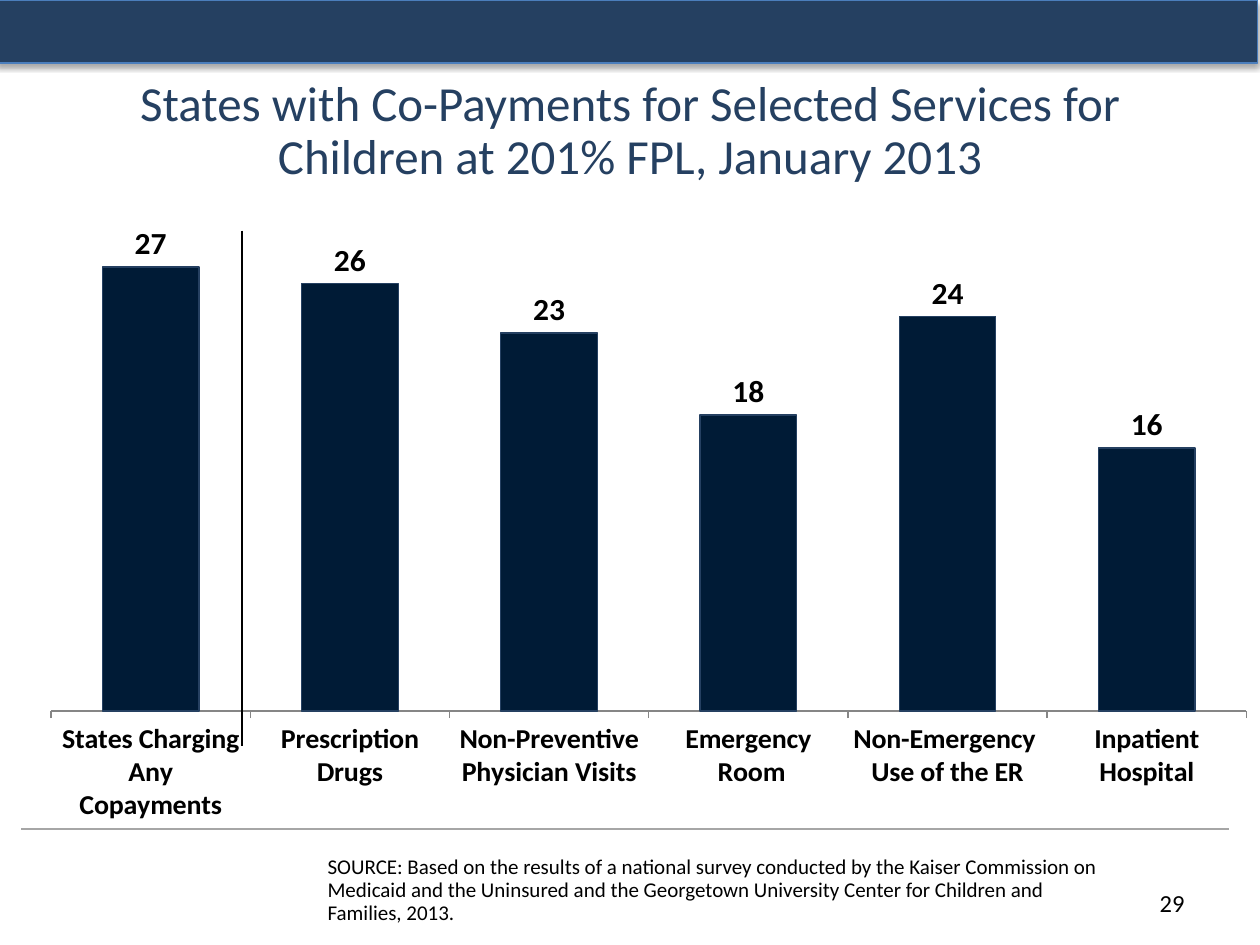
"""Build a slide charting states with co-payments for children's services."""
from dataclasses import dataclass

from lxml import etree
from pptx import Presentation
from pptx import util as u
from pptx.chart.data import CategoryChartData
from pptx.dml.color import RGBColor
from pptx.enum import chart as ch, shapes, text
from pptx.oxml import parse_xml
from pptx.oxml.ns import nsdecls, qn

COLORS = {"navy": "254061", "bar": "001B36", "edge": "4B7EBC",
          "text": "000000", "rule": "A6A6A6", "axis": "868686"}
COPAYS = {
    "States Charging Any Copayments": 27,
    "Prescription Drugs": 26,
    "Non-Preventive Physician Visits": 23,
    "Emergency\n Room": 18,
    "Non-Emergency \nUse of the ER": 24,
    "Inpatient Hospital": 16,
}
PLOT = {"x": 0.017, "y": 0.031, "w": 0.973, "h": 0.813}


@dataclass
class Rule:
    """A straight line given by its ends in inches."""
    x1: float
    y1: float
    x2: float
    y2: float
    color: str


@dataclass
class Label:
    """Text with its box and format."""
    words: str
    box: tuple
    size: int
    color: str
    para: dict
    frame: dict


RULES = [Rule(1.92, 1.83, 1.92, 5.92, "text"), Rule(0.17, 6.58, 9.75, 6.58, "rule")]
TITLE = Label("States with Co-Payments for Selected Services for Children at 201% FPL, "
              "January 2013", (0.5, 0.42, 9, 1.25), 28, "navy",
              {"alignment": text.PP_ALIGN.CENTER, "line_spacing": 0.9},
              {"vertical_anchor": text.MSO_ANCHOR.MIDDLE})
SOURCE = Label("SOURCE: Based on the results of a national survey conducted by the Kaiser "
               "Commission on Medicaid and the Uninsured and the Georgetown University "
               "Center for Children and Families, 2013.", (2.5, 6.75, 6.33, 0.75), 12, "text",
               {"alignment": text.PP_ALIGN.LEFT, "line_spacing": 0.9, "space_before": u.Pt(0)},
               {"vertical_anchor": text.MSO_ANCHOR.TOP})
NUMBER = Label("29", (7.17, 7, 2.33, 0.4), 14, "text",
               {"alignment": text.PP_ALIGN.RIGHT},
               {"vertical_anchor": text.MSO_ANCHOR.TOP})


def rgb(name: str) -> RGBColor:
    """Return a named colour."""
    return RGBColor.from_string(COLORS[name])


def apply(target, values: dict) -> None:
    """Set each attribute in values on the target."""
    for key, value in values.items():
        setattr(target, key, value)


def inches(box: tuple) -> list:
    """Return the lengths of a box."""
    return [u.Inches(n) for n in box]


def style_font(font, size: int, color: str = "text", bold: bool = False) -> None:
    """Format a font."""
    apply(font, {"name": "Calibri", "size": u.Pt(size), "bold": bold})
    font.color.rgb = rgb(color)


def style_line(line, color: str) -> None:
    """Give a line its colour and the common width."""
    line.color.rgb = rgb(color)
    line.width = u.Pt(0.75)


def write(sp, label: Label) -> None:
    """Place a text shape and fill it with its label."""
    apply(sp, dict(zip(("left", "top", "width", "height"), inches(label.box))))
    tf = sp.text_frame
    apply(tf, {"word_wrap": True, "auto_size": text.MSO_AUTO_SIZE.NONE, **label.frame})
    p = tf.paragraphs[0]
    if sp.is_placeholder:
        pPr = p._p.get_or_add_pPr()
        apply_indent = {"marL": "0", "indent": "0"}
        for key, value in apply_indent.items():
            pPr.set(key, value)
        etree.SubElement(pPr, qn("a:buNone"))
    apply(p, label.para)
    r = p.add_run()
    r.text = label.words
    style_font(r.font, label.size, label.color)


def draw_rule(s, rule: Rule) -> None:
    """Draw a line without a shadow."""
    ends = inches((rule.x1, rule.y1, rule.x2, rule.y2))
    cx = s.shapes.add_connector(shapes.MSO_CONNECTOR.STRAIGHT, *ends)
    style_line(cx.line, rule.color)
    etree.SubElement(cx._element.spPr, qn("a:effectLst"))


def draw_band(s) -> None:
    """Draw the top band with its soft shadow."""
    sp = s.shapes.add_shape(shapes.MSO_SHAPE.RECTANGLE, *inches((-0.02, 0, 10, 0.5)))
    sp.fill.solid()
    sp.fill.fore_color.rgb = rgb("navy")
    style_line(sp.line, "edge")
    sp._element.spPr.append(parse_xml(
        f'<a:effectLst {nsdecls("a")}><a:outerShdw blurRad="{u.Pt(3.1)}" '
        f'dist="{u.Pt(1.8)}" dir="5400000" rotWithShape="0"><a:srgbClr val="{COLORS["text"]}">'
        '<a:alpha val="35000"/></a:srgbClr></a:outerShdw></a:effectLst>'))


def draw_chart(s) -> None:
    """Draw the column chart of states by service."""
    data = CategoryChartData(number_format="0")
    data.categories = list(COPAYS)
    data.add_series("Series 1", list(COPAYS.values()))
    chart = s.shapes.add_chart(ch.XL_CHART_TYPE.COLUMN_CLUSTERED,
                               *inches((0.24, 1.58, 9.75, 4.95)), data).chart
    apply(chart, {"has_legend": False, "has_title": False})
    style_font(chart.font, 18)
    apply(chart.value_axis, {"visible": False, "has_major_gridlines": False,
                             "minimum_scale": 0, "maximum_scale": 30})
    axis = chart.category_axis
    axis.major_tick_mark = ch.XL_TICK_MARK.OUTSIDE
    style_font(axis.tick_labels.font, 16, bold=True)
    style_line(axis.format.line, "axis")
    plot = chart.plots[0]
    apply(plot, {"gap_width": 106, "vary_by_categories": False, "has_data_labels": True})
    apply(plot.data_labels, {"show_value": True, "number_format": "0",
                             "number_format_is_linked": False,
                             "position": ch.XL_LABEL_POSITION.OUTSIDE_END})
    style_font(plot.data_labels.font, 18, bold=True)
    fmt = plot.series[0].format
    fmt.fill.solid()
    fmt.fill.fore_color.rgb = rgb("bar")
    style_line(fmt.line, "navy")
    area = chart._chartSpace.chart.plotArea
    for old in area.findall(qn("c:layout")):
        area.remove(old)
    modes = '<c:layoutTarget val="inner"/><c:xMode val="edge"/><c:yMode val="edge"/>'
    sizes = "".join(f'<c:{key} val="{value}"/>' for key, value in PLOT.items())
    area.insert(0, parse_xml(f'<c:layout {nsdecls("c")}><c:manualLayout>{modes}{sizes}'
                             '</c:manualLayout></c:layout>'))


def main() -> None:
    """Build and save the slide."""
    prs = Presentation()
    apply(prs, {"slide_width": u.Inches(10), "slide_height": u.Inches(7.5)})
    s = prs.slides.add_slide(prs.slide_layouts[1])
    write(s.shapes.title, TITLE)
    write(s.placeholders[1], SOURCE)
    draw_chart(s)
    divider, footer_rule = RULES
    draw_rule(s, divider)
    draw_band(s)
    draw_rule(s, footer_rule)
    write(s.shapes.add_textbox(*inches(NUMBER.box)), NUMBER)
    prs.save("out.pptx")


if __name__ == "__main__":
    main()
